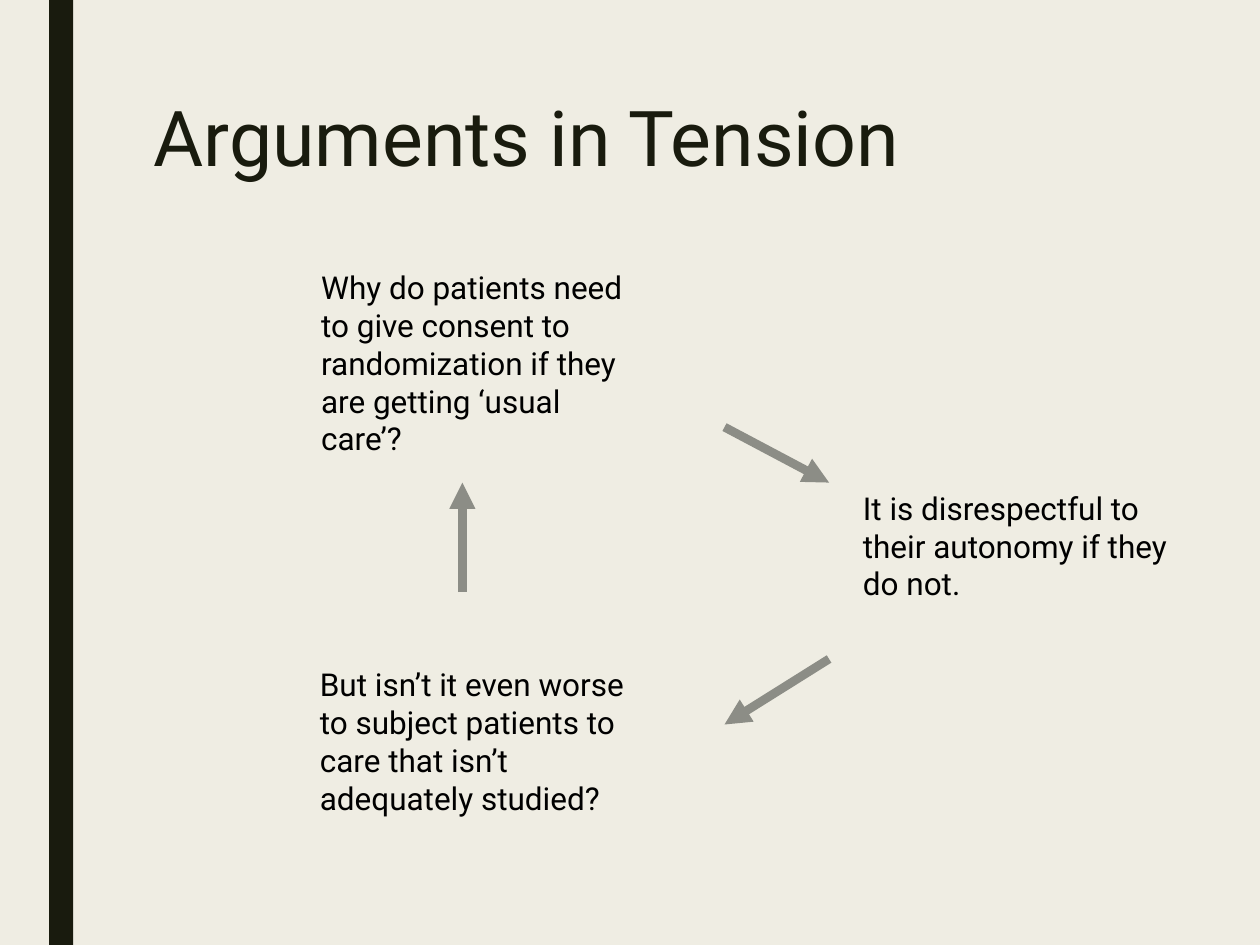
from dataclasses import dataclass

from lxml import etree
from pptx import Presentation
from pptx import util as u
from pptx.dml.color import RGBColor
from pptx.enum import shapes, text
from pptx.oxml import ns


@dataclass(frozen=True)
class Theme:
    font: str = "Roboto"
    background: str = "EFEDE3"
    dark: str = "191B0E"
    body: str = "000000"
    arrow: str = "8C8D86"
    title_size: int = 44
    body_size: int = 18
    arrow_width: int = 5


class SlideBuilder:
    def __init__(self, slide, theme):
        self.slide = slide
        self.theme = theme
        fill = slide.background.fill
        fill.solid()
        fill.fore_color.rgb = RGBColor.from_string(theme.background)

    def style(self, paragraph, size, color):
        for run in paragraph.runs:
            run.font.name = self.theme.font
            run.font.size = u.Pt(size)
            run.font.color.rgb = RGBColor.from_string(color)

    def bar(self, *box):
        band = self.slide.shapes.add_shape(
            shapes.MSO_SHAPE.RECTANGLE, *map(u.Inches, box))
        band.shadow.inherit = False
        band.fill.solid()
        band.fill.fore_color.rgb = RGBColor.from_string(self.theme.dark)
        band.line.fill.background()

    def title(self, wording, *box):
        heading = self.slide.shapes.title
        heading.left, heading.top, heading.width, heading.height = map(u.Inches, box)
        frame = heading.text_frame
        frame.text = wording
        frame.word_wrap = True
        frame.auto_size = text.MSO_AUTO_SIZE.NONE
        frame.vertical_anchor = text.MSO_ANCHOR.TOP
        paragraph = frame.paragraphs[0]
        paragraph.alignment = text.PP_ALIGN.LEFT
        paragraph.line_spacing = 0.89
        self.style(paragraph, self.theme.title_size, self.theme.dark)

    def argument(self, wording, *box):
        frame = self.slide.shapes.add_textbox(*map(u.Inches, box)).text_frame
        frame.text = wording
        frame.word_wrap = True
        frame.auto_size = text.MSO_AUTO_SIZE.SHAPE_TO_FIT_TEXT
        self.style(frame.paragraphs[0], self.theme.body_size, self.theme.body)

    def arrow(self, *ends):
        link = self.slide.shapes.add_connector(
            shapes.MSO_CONNECTOR.STRAIGHT, *map(u.Inches, ends))
        link.line.color.rgb = RGBColor.from_string(self.theme.arrow)
        link.line.width = u.Pt(self.theme.arrow_width)
        properties = link._element.spPr
        outline = properties.find(ns.qn("a:ln"))
        etree.SubElement(outline, ns.qn("a:tailEnd"), type="triangle")
        etree.SubElement(properties, ns.qn("a:effectLst"))


def main():
    deck = Presentation()
    deck.slide_width, deck.slide_height = u.Inches(10), u.Inches(7.5)
    title_only = deck.slide_layouts[5]
    page = SlideBuilder(deck.slides.add_slide(title_only), Theme())

    page.bar(0.39, 0, 0.19, 7.5)
    page.title("Arguments in Tension", 1.12, 0.75, 7.88, 1.62)

    arguments = [
        ("Why do patients need to give consent to randomization "
         "if they are getting ‘usual care’?", 2.45, 2.08, 1.31),
        ("It is disrespectful to their autonomy if they do not.",
         6.75, 3.83, 0.71),
        ("But isn’t it even worse to subject patients to care "
         "that isn’t adequately studied?", 2.44, 5.23, 1.31),
    ]
    for wording, left, top, height in arguments:
        page.argument(wording, left, top, 2.75, height)

    cycle = [
        (5.75, 3.39, 6.58, 3.83),
        (6.58, 5.23, 5.75, 5.75),
        (3.67, 4.7, 3.67, 3.83),
    ]
    for ends in cycle:
        page.arrow(*ends)

    deck.save("out.pptx")


if __name__ == "__main__":
    main()
